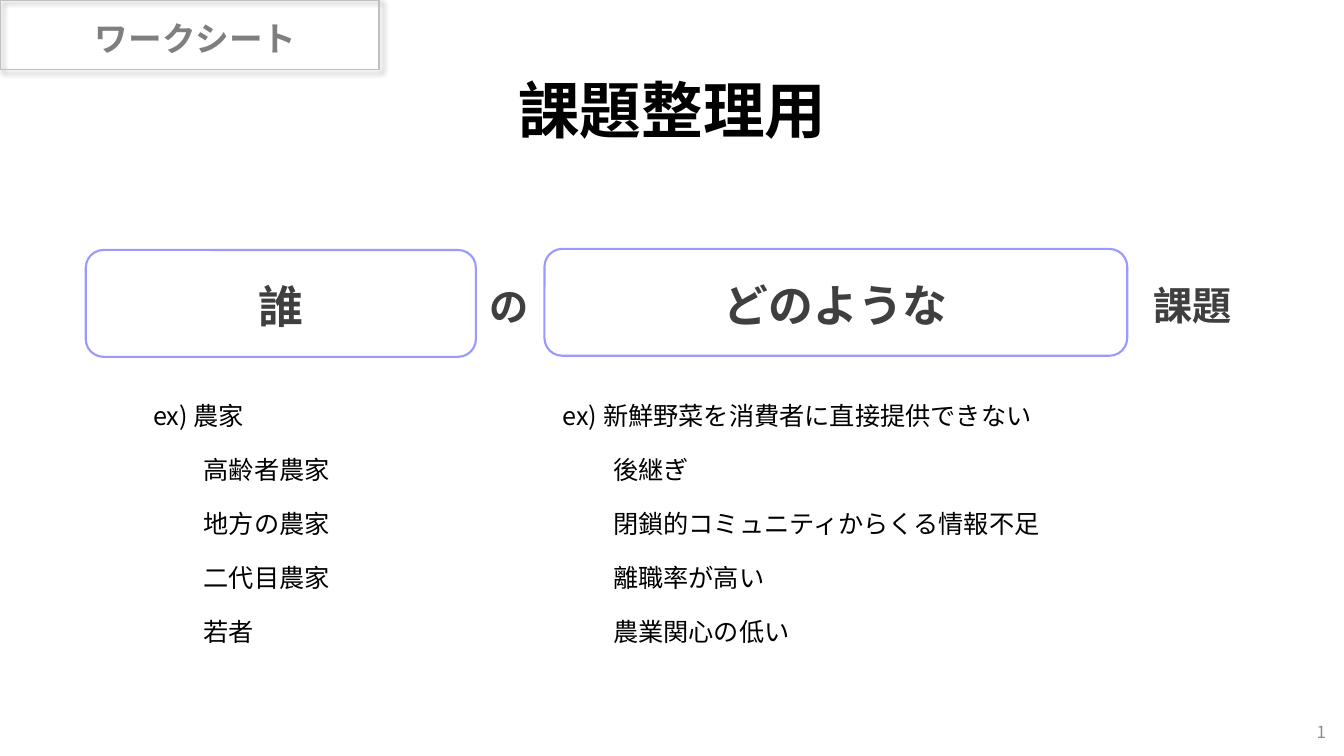
from lxml import etree
from pptx import Presentation
from pptx.dml.color import RGBColor
from pptx.enum.shapes import MSO_SHAPE
from pptx.enum.text import MSO_ANCHOR, MSO_AUTO_SIZE, PP_ALIGN
from pptx.oxml.ns import qn
from pptx.util import Inches, Pt

RECTANGLE = MSO_SHAPE.RECTANGLE
ROUNDED = MSO_SHAPE.ROUNDED_RECTANGLE
MIDDLE, TOP = MSO_ANCHOR.MIDDLE, MSO_ANCHOR.TOP
LEFT, CENTER, RIGHT = PP_ALIGN.LEFT, PP_ALIGN.CENTER, PP_ALIGN.RIGHT
NO_AUTOFIT = MSO_AUTO_SIZE.NONE

FONT = "Noto Sans CJK JP"
COLORS = {
    "black": "000000",
    "dark": "3F3F3F",
    "label": "7F7F7F",
    "number": "8C8C8C",
    "frame": "9999FF",
    "tab": "BFBFBF",
}
WIDTH, HEIGHT = Inches(13.33), Inches(7.5)
LIST_INDENT = Inches(0.5)
LIST_GAP = Pt(17)

WHO_EXAMPLES = ["ex) 農家", "高齢者農家", "地方の農家", "二代目農家", "若者"]
WHAT_EXAMPLES = [
    "ex) 新鮮野菜を消費者に直接提供できない",
    "後継ぎ",
    "閉鎖的コミュニティからくる情報不足",
    "離職率が高い",
    "農業関心の低い",
]


def area(left, top, width, height):
    """Turn percentages of the slide into lengths."""
    return (int(WIDTH * left / 100), int(HEIGHT * top / 100),
            int(WIDTH * width / 100), int(HEIGHT * height / 100))


def place(shape, bounds):
    shape.left, shape.top, shape.width, shape.height = bounds


def prepare_frame(shape, anchor=MIDDLE, bottom=0.0):
    frame = shape.text_frame
    frame.word_wrap = True
    frame.auto_size = NO_AUTOFIT
    frame.vertical_anchor = anchor
    frame.margin_left = frame.margin_right = Inches(0.1)
    frame.margin_top, frame.margin_bottom = Inches(0.05), Inches(bottom)
    return frame


def style_font(font, size, color, bold):
    font.name, font.size, font.bold = FONT, Pt(size), bold
    font.color.rgb = RGBColor.from_string(COLORS[color])


def add_run(paragraph, text, size, color, bold=False):
    run = paragraph.add_run()
    run.text = text
    style_font(run.font, size, color, bold)
    latin = run.font._element.find(qn("a:latin"))
    latin.addnext(latin.makeelement(qn("a:ea"), {"typeface": FONT}))


def write_line(shape, text, size, color, anchor=MIDDLE, bottom=0.0):
    """Fill a shape with one centred bold line."""
    paragraph = prepare_frame(shape, anchor, bottom).paragraphs[0]
    paragraph.alignment = CENTER
    add_run(paragraph, text, size, color, bold=True)
    return paragraph


def add_outline(shapes, kind, bounds, color, width):
    shape = shapes.add_shape(kind, *bounds)
    shape.fill.background()
    shape.line.color.rgb = RGBColor.from_string(COLORS[color])
    shape.line.width = Pt(width)
    shape.shadow.inherit = False
    return shape


def add_blank(slide, text, bounds):
    shape = add_outline(slide.shapes, ROUNDED, bounds, "frame", 1.5)
    write_line(shape, text, 32, "dark")


def add_word(slide, text, bounds):
    write_line(slide.shapes.add_textbox(*bounds), text, 28, "dark")


def fill_examples(placeholder, examples, bounds):
    """Write a list whose first line hangs out by its "ex)" mark."""
    place(placeholder, bounds)
    frame = prepare_frame(placeholder)
    for index, example in enumerate(examples):
        paragraph = frame.add_paragraph() if index else frame.paragraphs[0]
        properties = paragraph._p.get_or_add_pPr()
        properties.set("marL", str(LIST_INDENT))
        properties.set("indent", str(0 if index else -LIST_INDENT))
        etree.SubElement(properties, qn("a:buNone"))
        paragraph.alignment = LEFT
        paragraph.line_spacing = 1.0
        paragraph.space_before = LIST_GAP if index else Pt(0)
        add_run(paragraph, example, 18, "black")


def add_shadow(shape):
    effects = shape._element.spPr.find(qn("a:effectLst"))
    shadow = etree.SubElement(
        effects, qn("a:outerShdw"), blurRad=str(Pt(4)), dist=str(Pt(3)),
        dir=str(45 * 60000), algn="tl", rotWithShape="0")
    color = etree.SubElement(shadow, qn("a:srgbClr"), val=COLORS["black"])
    etree.SubElement(color, qn("a:alpha"), val="40000")


def add_corner_tab(slide, text):
    group = slide.shapes.add_group_shape()
    add_shadow(add_outline(group.shapes, RECTANGLE,
                           area(0, 0, 28.21, 9.2), "tab", 1))
    label = group.shapes.add_textbox(*area(0.9, 1.73, 27.31, 6.67))
    write_line(label, text, 24, "label", TOP, 0.05)


def add_slide_number(slide, number):
    """Add a number field that follows the slide's position."""
    shape = slide.shapes.add_textbox(*area(76.89, 94.13, 22.51, 5.33))
    paragraph = prepare_frame(shape, bottom=0.05).paragraphs[0]
    paragraph.alignment = RIGHT
    add_run(paragraph, number, 12, "number")
    run = paragraph.runs[0]._r
    field = etree.SubElement(
        paragraph._p, qn("a:fld"), type="slidenum",
        id="{B6F15528-21DE-4FAA-801E-634DDDAF4B2B}")
    field.extend(list(run))
    paragraph._p.remove(run)


def main():
    presentation = Presentation()
    presentation.slide_width, presentation.slide_height = WIDTH, HEIGHT
    slide = presentation.slides.add_slide(presentation.slide_layouts[3])
    title, who_list, what_list = slide.placeholders

    place(title, area(6.9, 5.33, 86.27, 19.33))
    write_line(title, "課題整理用", 44, "black", bottom=0.05).line_spacing = 0.9

    add_blank(slide, "誰", area(6.38, 33.07, 29.03, 14.13))
    add_blank(slide, "どのような", area(40.51, 32.93, 43.36, 14.13))
    add_word(slide, "の", area(34.66, 36.67, 6.45, 6.93))
    add_word(slide, "課題", area(83.8, 36.53, 9.9, 6.93))

    fill_examples(who_list, WHO_EXAMPLES, area(10.65, 50.4, 30.46, 37.07))
    fill_examples(what_list, WHAT_EXAMPLES, area(41.11, 50.4, 43.36, 37.07))

    add_corner_tab(slide, "ワークシート")
    add_slide_number(slide, "2")
    presentation.save("out.pptx")


if __name__ == "__main__":
    main()
